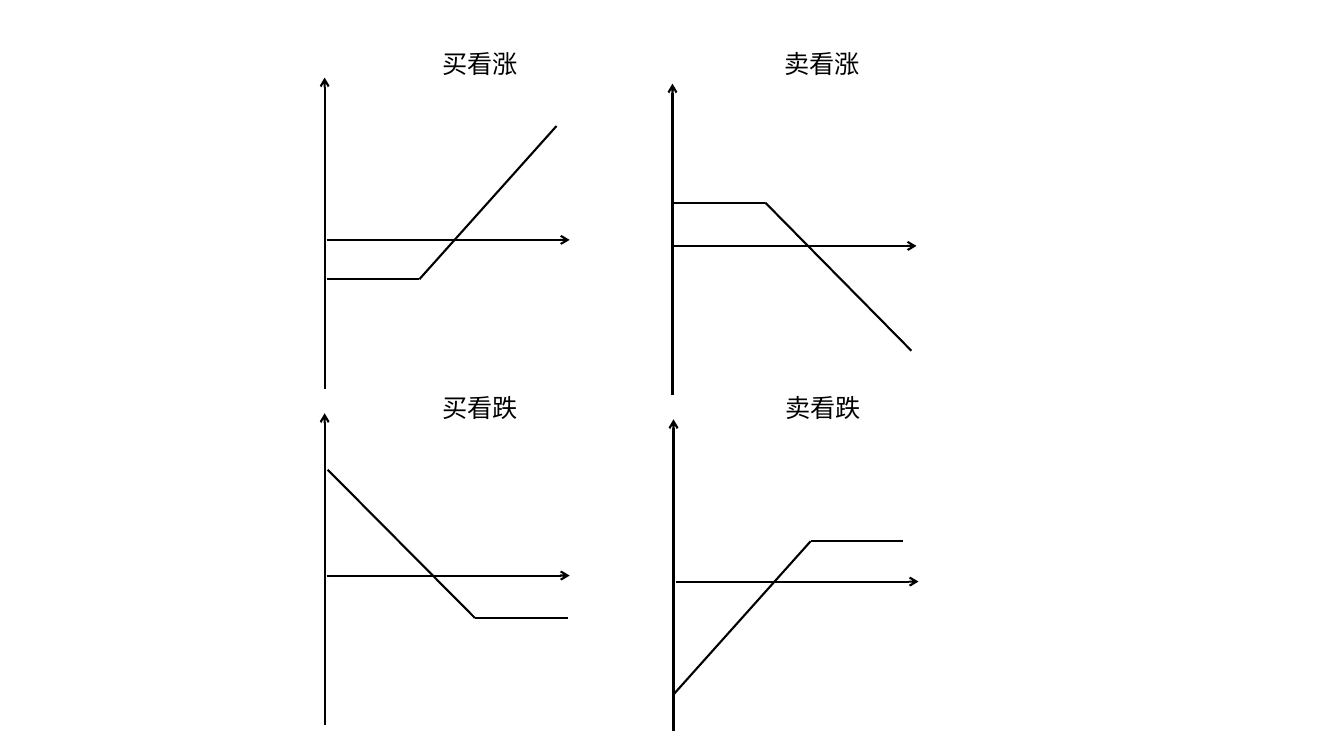
from itertools import pairwise

from lxml import etree
from pptx import Presentation
from pptx.dml.color import RGBColor
from pptx.enum.shapes import MSO_CONNECTOR
from pptx.enum.text import MSO_AUTO_SIZE
from pptx.oxml.ns import qn
from pptx.util import Emu, Pt

STRAIGHT = MSO_CONNECTOR.STRAIGHT
FIT_SHAPE = MSO_AUTO_SIZE.SHAPE_TO_FIT_TEXT
PX = 9144
COLORS = {"ink": "000000"}
FONT = "Noto Sans CJK SC"

PAYOFFS = [
    ("买看涨", (429, 43), (322, 238), 2, [(2, 39), (94, 39), (230, -113)]),
    ("卖看涨", (768, 43), (667, 244), 1, [(0, -43), (92, -43), (237, 104)]),
    ("买看跌", (429, 384), (322, 571), 2, [(3, -105), (149, 42), (241, 42)]),
    ("卖看跌", (769, 384), (668, 577), 2, [(0, 112), (136, -40), (228, -40)]),
]


class PayoffSlide:
    """Draws option payoff diagrams on one slide in a shared style."""

    def __init__(self, page):
        self.page = page
        self.ink = RGBColor.from_string(COLORS["ink"])

    def line(self, start, end, arrow=False):
        ends = [Emu(length * PX) for length in (*start, *end)]
        connector = self.page.shapes.add_connector(STRAIGHT, *ends)
        connector.line.color.rgb = self.ink
        connector.line.width = Pt(1.5)
        if arrow:
            outline = connector.line._get_or_add_ln()
            etree.SubElement(outline, qn("a:tailEnd"), type="arrow")
        etree.SubElement(connector._element.spPr, qn("a:effectLst"))

    def label(self, text, left, top):
        frame = [Emu(length * PX) for length in (left, top, 95, 40)]
        box = self.page.shapes.add_textbox(*frame).text_frame
        box.word_wrap = False
        box.auto_size = FIT_SHAPE
        para = box.paragraphs[0]
        para.text = text
        para.font.size = Pt(18)
        para.font.name = FONT
        para.font.color.rgb = self.ink
        style = para._p.pPr.find(qn("a:defRPr"))
        etree.SubElement(style, qn("a:ea"), typeface=FONT)

    def axes(self, x, y, gap):
        self.line((x, y + 148), (x, y - 161), arrow=True)
        self.line((x + gap, y), (x + gap + 241, y), arrow=True)

    def payoff(self, x, y, offsets):
        points = [(x + dx, y + dy) for dx, dy in offsets]
        for start, end in pairwise(points):
            self.line(start, end)


def main():
    deck = Presentation()
    deck.slide_width = Emu(1333 * PX)
    deck.slide_height = Emu(750 * PX)
    slide = PayoffSlide(deck.slides.add_slide(deck.slide_layouts[6]))
    for name, corner, origin, gap, offsets in PAYOFFS:
        slide.axes(*origin, gap)
        slide.payoff(*origin, offsets)
        slide.label(name, *corner)
    deck.save("out.pptx")


if __name__ == "__main__":
    main()
